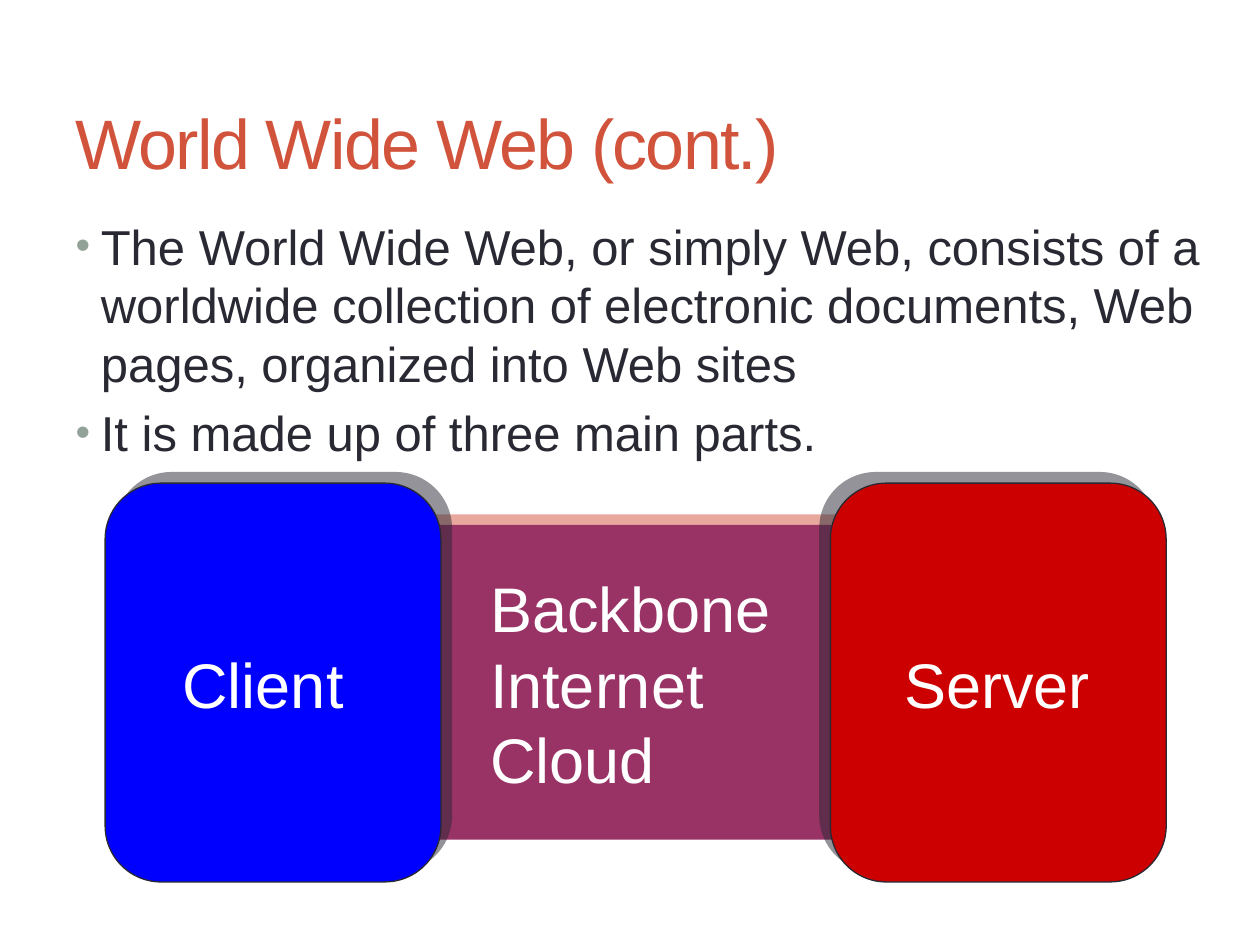
from lxml.etree import SubElement
from pptx import Presentation
from pptx.dml.color import RGBColor
from pptx.enum.shapes import MSO_SHAPE
from pptx.enum.text import MSO_ANCHOR, MSO_AUTO_SIZE, PP_ALIGN
from pptx.oxml.ns import qn
from pptx.util import Cm, Pt


def rgb(value):
    return RGBColor.from_string(value)


def add_xml(parent, tag, **attrs):
    return SubElement(parent, qn(tag), {k: str(v) for k, v in attrs.items()})


class SlideBuilder:
    FONT = "Arial"
    TITLE, DARK, WHITE, BULLET = "D2533C", "292934", "FFFFFF", "93A299"

    def __init__(self, prs):
        self.s = prs.slides.add_slide(prs.slide_layouts[1])

    def place(self, sp, box):
        sp.left, sp.top, sp.width, sp.height = (Cm(v) for v in box)

    def style(self, p, size, color):
        p.alignment = PP_ALIGN.LEFT
        for r in p.runs:
            r.font.name, r.font.size = self.FONT, Pt(size)
            r.font.color.rgb = rgb(color)

    def title(self, text, box):
        sp = self.s.shapes.title
        self.place(sp, box)
        tf = sp.text_frame
        tf.text = text
        tf.vertical_anchor = MSO_ANCHOR.MIDDLE
        tf.auto_size = MSO_AUTO_SIZE.NONE
        p = tf.paragraphs[0]
        self.style(p, 40, self.TITLE)
        p.runs[0].font._element.set("spc", "-100")

    def bullets(self, items, box):
        sp = self.s.placeholders[1]
        self.place(sp, box)
        tf = sp.text_frame
        tf.text = "\n".join(items)
        tf.auto_size = MSO_AUTO_SIZE.NONE
        for p in tf.paragraphs:
            self.style(p, 28, self.DARK)
            pPr = p._p.get_or_add_pPr()
            pPr.set("marL", str(Cm(0.51)))
            pPr.set("indent", str(Cm(-0.51)))
            add_xml(add_xml(pPr, "a:buClr"), "a:srgbClr", val=self.BULLET)
            add_xml(pPr, "a:buSzPct", val=85000)
            add_xml(pPr, "a:buFont", typeface=self.FONT)
            add_xml(pPr, "a:buChar", char="•")

    def shadow(self, sp, color, angle):
        sp.shadow.inherit = False
        effects = sp._element.spPr.find(qn("a:effectLst"))
        outer = add_xml(effects, "a:outerShdw", blurRad=0, dist=Pt(8.5),
                        dir=angle * 60000, algn="ctr", rotWithShape=0)
        add_xml(add_xml(outer, "a:srgbClr", val=color), "a:alpha", val=50000)

    def block(self, kind, box, fill, shadow, angle, text, text_box, line=None):
        """A filled shape grouped with its label."""
        shapes = self.s.shapes.add_group_shape().shapes
        sp = shapes.add_shape(kind, *(Cm(v) for v in box))
        sp.fill.solid()
        sp.fill.fore_color.rgb = rgb(fill)
        if line:
            sp.line.color.rgb = rgb(line)
            sp.line.width = Pt(0.75)
        else:
            sp.line.fill.background()
        self.shadow(sp, shadow, angle)
        label = shapes.add_textbox(*(Cm(v) for v in text_box))
        tf = label.text_frame
        tf.text = text
        tf.word_wrap = False
        tf.auto_size = MSO_AUTO_SIZE.SHAPE_TO_FIT_TEXT
        for p in tf.paragraphs:
            self.style(p, 36, self.WHITE)

    def node(self, left, fill, angle, text, text_left, text_width):
        self.block(MSO_SHAPE.ROUNDED_RECTANGLE, (left, 9.74, 6.77, 8.04), fill,
                   self.DARK, angle, text, (text_left, 12.88, text_width, 1.78),
                   line=self.DARK)


def main():
    prs = Presentation()
    prs.slide_width, prs.slide_height = Cm(25.4), Cm(19.05)
    slide = SlideBuilder(prs)

    # Title and list
    slide.title("World Wide Web (cont.)", (1.27, 1.47, 22.86, 2.75))
    slide.bullets([
        "The World Wide Web, or simply Web, consists of a worldwide collection "
        "of electronic documents, Web pages, organized into Web sites",
        "It is made up of three main parts.",
    ], (1.27, 4.23, 23.5, 5.28))

    # Backbone behind the two end points
    slide.block(MSO_SHAPE.RECTANGLE, (8.48, 10.58, 8.47, 6.35), "993366",
                slide.TITLE, 315, "Backbone\nInternet\nCloud",
                (9.63, 11.36, 6.15, 4.83))

    # Client and server
    slide.node(2.12, "0000FF", 315, "Client", 3.43, 3.76)
    slide.node(16.74, "CC0000", 225, "Server", 17.98, 4.24)

    prs.save("out.pptx")


if __name__ == "__main__":
    main()
